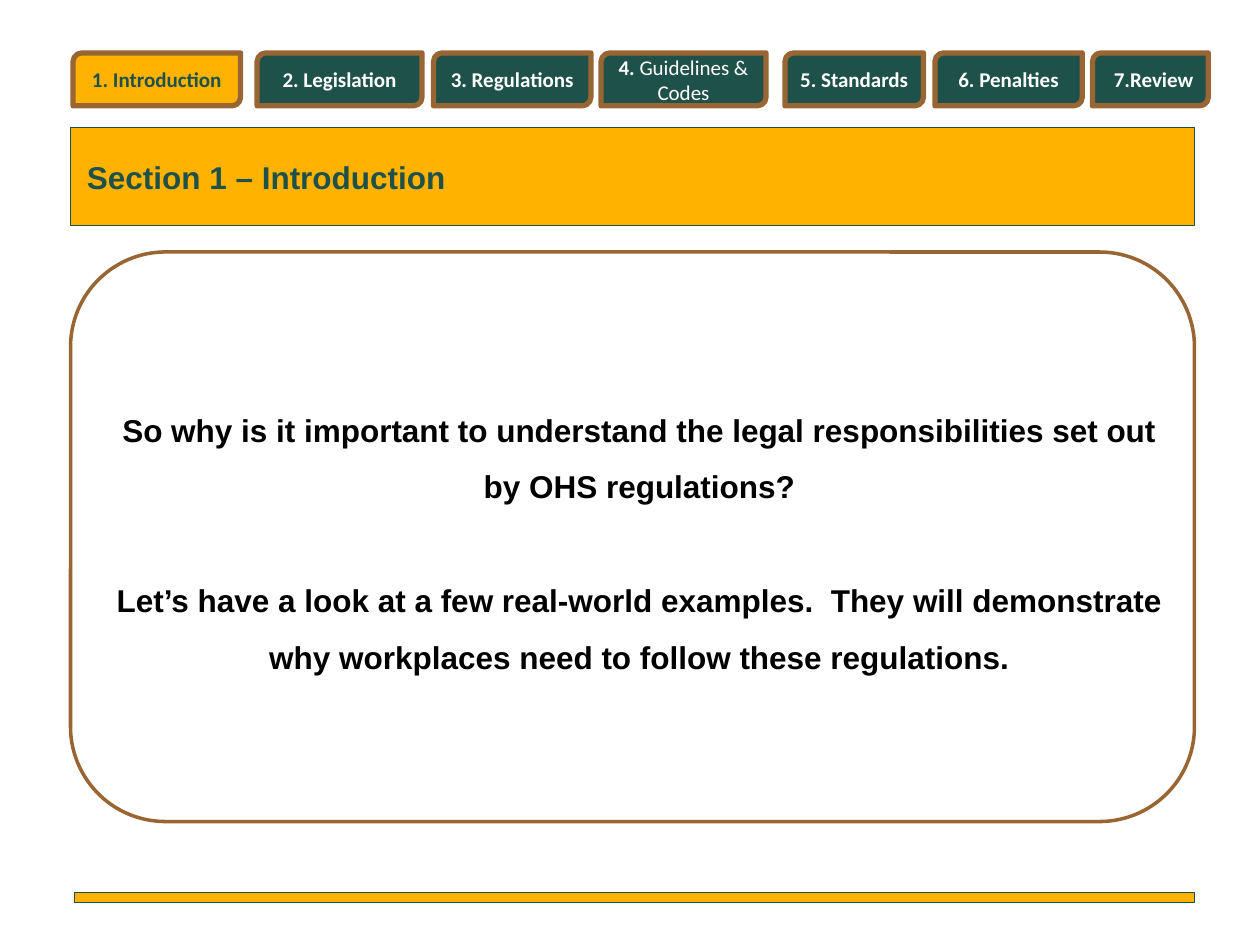
from pptx import Presentation
from pptx.dml.color import RGBColor
from pptx.enum.shapes import MSO_SHAPE as Shape
from pptx.enum.text import MSO_ANCHOR as Anchor, MSO_AUTO_SIZE as AutoSize, PP_ALIGN as Align
from pptx.oxml.xmlchemy import OxmlElement
from pptx.util import Inches, Pt

# Content
AMBER, GREEN, BROWN, WHITE, BLACK = "FFB300", "1F514B", "996532", "FFFFFF", "000000"
TITLE = "Section 1 – Introduction"
BODY = [
    "So why is it important to understand the legal responsibilities set out by OHS regulations?",
    "Let’s have a look at a few real-world examples.  They will demonstrate "
    "why workplaces need to follow these regulations.",
]
# Tabs: left, width, bold text, regular text, alignment
TABS = [
    (0.58, 1.33, "1. Introduction", "", Align.CENTER),
    (2.04, 1.31, "2. Legislation", "", Align.CENTER),
    (3.44, 1.25, "3. Regulations", "", Align.CENTER),
    (4.77, 1.31, "4. ", "Guidelines & Codes", Align.CENTER),
    (6.23, 1.10, "5. Standards", "", Align.CENTER),
    (7.42, 1.17, "6. Penalties", "", Align.CENTER),
    (8.67, 0.92, "7.Review", "", Align.RIGHT),
]
CURRENT_TAB = 0
TAB_TOP, TAB_HEIGHT = 0.42, 0.42


def color(value):
    return RGBColor.from_string(value)


def add_box(page, kind, place, fill, line, weight):
    box = page.shapes.add_shape(kind, *map(Inches, place))
    box.shadow.inherit = False
    if fill:
        box.fill.solid()
        box.fill.fore_color.rgb = color(fill)
    else:
        box.fill.background()
    box.line.color.rgb = color(line)
    box.line.width = Pt(weight)
    return box


def add_span(para, text, size, font, ink, bold=True):
    span = para.add_run()
    span.text = text
    span.font.size = Pt(size)
    span.font.name = font
    span.font.bold = bold
    span.font.color.rgb = color(ink)


def place_text(page, holder, place, anchor):
    """Position a placeholder and bring it in front of the shapes drawn so far."""
    holder.left, holder.top, holder.width, holder.height = map(Inches, place)
    page.shapes._spTree.append(holder._element)
    frame = holder.text_frame
    frame.word_wrap = True
    frame.auto_size = AutoSize.NONE
    frame.vertical_anchor = anchor
    return frame


deck = Presentation()
deck.slide_width, deck.slide_height = Inches(10), Inches(7.5)
page = deck.slides.add_slide(deck.slide_layouts[1])
title, body = page.placeholders

# Content frame and footer bar
add_box(page, Shape.ROUNDED_RECTANGLE, (0.56, 2, 8.92, 4.52), None, BROWN, 2)
add_box(page, Shape.RECTANGLE, (0.59, 7.08, 8.89, 0.08), AMBER, GREEN, 0.5)

# Body text
frame = place_text(page, body, (0.75, 2.17, 8.65, 5.1), Anchor.TOP)
frame.margin_top = Inches(0.94)
for index, text in enumerate(BODY):
    para = frame.add_paragraph() if index else frame.paragraphs[0]
    para.alignment = Align.CENTER
    para.line_spacing = 1.5
    para.space_before = Pt(32.5 if index else 0)
    props = para._p.get_or_add_pPr()
    props.set("marL", "0")
    props.set("indent", "0")
    props.append(OxmlElement("a:buNone"))
    add_span(para, text, 18, "Arial", BLACK)

# Section heading
add_box(page, Shape.RECTANGLE, (0.56, 1.01, 8.92, 0.78), AMBER, GREEN, 0.5)
frame = place_text(page, title, (0.59, 1.2, 7.57, 0.4), Anchor.MIDDLE)
frame.paragraphs[0].alignment = Align.LEFT
add_span(frame.paragraphs[0], TITLE, 18, "Arial", GREEN)

# Navigation tabs
for index, (left, width, strong, plain, align) in enumerate(TABS):
    fill, ink = (AMBER, GREEN) if index == CURRENT_TAB else (GREEN, WHITE)
    box = add_box(page, Shape.ROUND_2_DIAG_RECTANGLE,
                  (left, TAB_TOP, width, TAB_HEIGHT), fill, BROWN, 3)
    box.text_frame.word_wrap = True
    box.text_frame.vertical_anchor = Anchor.MIDDLE
    para = box.text_frame.paragraphs[0]
    para.alignment = align
    add_span(para, strong, 12, "Calibri", ink)
    if plain:
        add_span(para, plain, 12, "Calibri", ink, bold=False)

deck.save("out.pptx")
